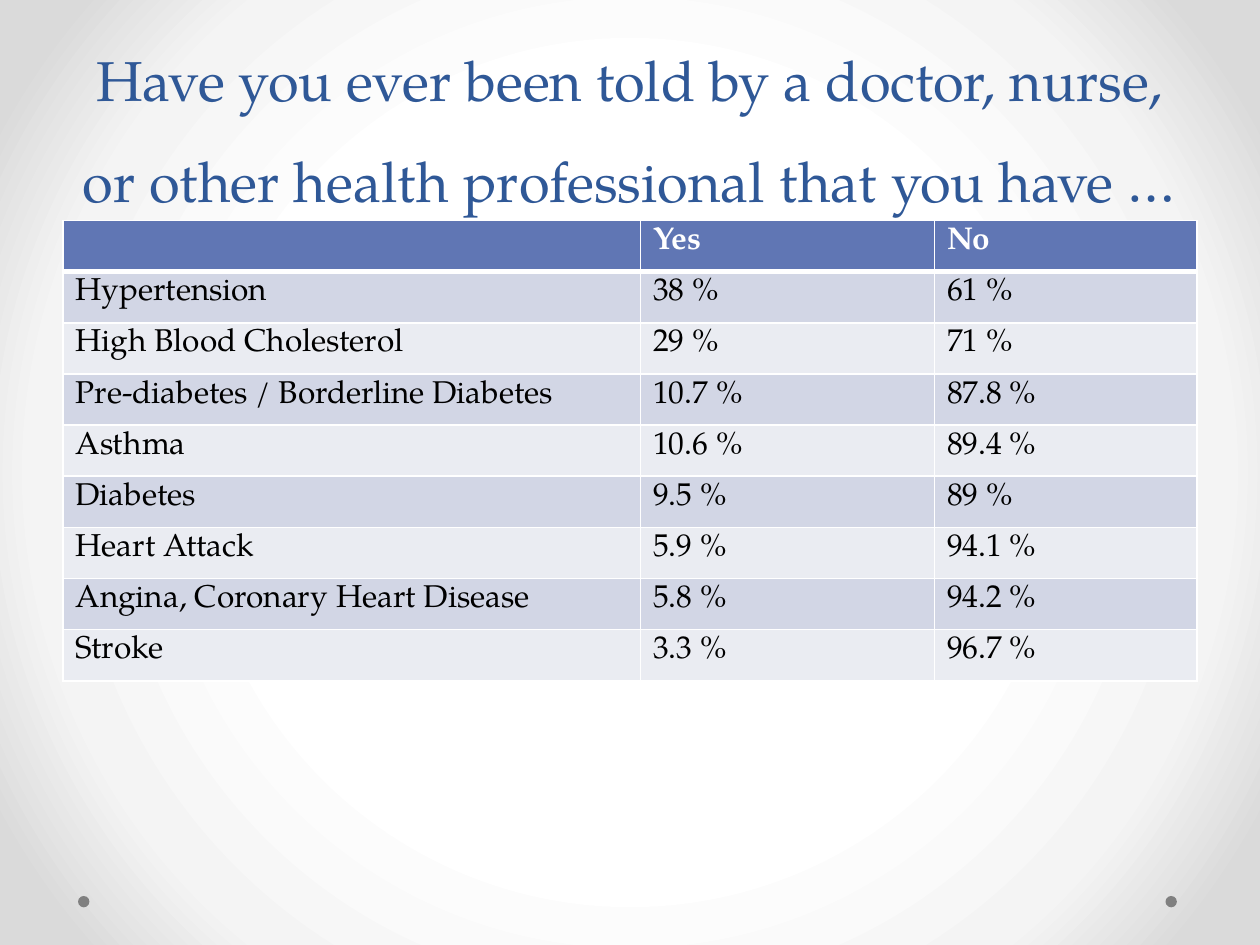
from dataclasses import dataclass

from pptx import Presentation
from pptx.dml.color import RGBColor
from pptx.enum.shapes import MSO_SHAPE
from pptx.enum.text import MSO_ANCHOR, MSO_AUTO_SIZE, PP_ALIGN
from pptx.oxml import parse_xml
from pptx.oxml.ns import nsdecls, qn
from pptx.slide import Slide
from pptx.table import _Cell
from pptx.text.text import _Paragraph
from pptx.util import Pt

FONT = "TeX Gyre Pagella"
WHITE = "FFFFFF"
TITLE = "Have you ever been told by a doctor, nurse, or other health professional that you have …"
COLUMN_WIDTHS = (330, 168, 150)
ROW_HEIGHT = 29.25
GRADIENT_STOPS = ((50, WHITE), (76, "F4F4F4"), (92, "DADADA"))


@dataclass(frozen=True)
class Answer:
    condition: str
    yes: str
    no: str


@dataclass(frozen=True)
class RowStyle:
    fill: str
    font: str
    bold: bool
    bottom_border: float


HEADER = Answer("", "Yes", "No")
ANSWERS = (
    Answer("Hypertension", "38 %", "61 %"),
    Answer("High Blood Cholesterol", "29 %", "71 %"),
    Answer("Pre-diabetes / Borderline Diabetes", "10.7 %", "87.8 %"),
    Answer("Asthma", "10.6 %", "89.4 %"),
    Answer("Diabetes", "9.5 %", "89 %"),
    Answer("Heart Attack", "5.9 %", "94.1 %"),
    Answer("Angina, Coronary Heart Disease", "5.8 %", "94.2 %"),
    Answer("Stroke", "3.3 %", "96.7 %"),
)
HEADER_STYLE = RowStyle("6076B4", WHITE, True, 3)
BAND_STYLES = (
    RowStyle("D2D6E5", "000000", False, 1),
    RowStyle("EAECF2", "000000", False, 1),
)


def color(value: str) -> RGBColor:
    return RGBColor.from_string(value)


def format_runs(paragraph: _Paragraph, size: float, font_color: str, bold: bool = False) -> None:
    for run in paragraph.runs:
        run.font.name = FONT
        run.font.size = Pt(size)
        run.font.bold = bold
        run.font.color.rgb = color(font_color)


def set_background(slide: Slide) -> None:
    stops = "".join(
        f'<a:gs pos="{position * 1000}"><a:srgbClr val="{value}"/></a:gs>'
        for position, value in GRADIENT_STOPS
    )
    background = parse_xml(
        f'<p:bg {nsdecls("p", "a")}><p:bgPr><a:gradFill rotWithShape="1">'
        f'<a:gsLst>{stops}</a:gsLst><a:path path="circle">'
        '<a:fillToRect l="50000" t="50000" r="50000" b="50000"/></a:path>'
        '</a:gradFill><a:effectLst/></p:bgPr></p:bg>'
    )
    slide.element.find(qn("p:cSld")).insert(0, background)


def add_dot(slide: Slide, left: float) -> None:
    dot = slide.shapes.add_shape(MSO_SHAPE.OVAL, Pt(left), Pt(512), Pt(6.5), Pt(6.5))
    dot.shadow.inherit = False
    dot.fill.solid()
    dot.fill.fore_color.rgb = color("808080")
    dot.line.fill.background()


def set_title(slide: Slide) -> None:
    title = slide.shapes.title
    title.left, title.top, title.width, title.height = Pt(36), Pt(0), Pt(648), Pt(126)
    text_frame = title.text_frame
    text_frame.text = TITLE
    text_frame.word_wrap = True
    text_frame.auto_size = MSO_AUTO_SIZE.NONE
    text_frame.vertical_anchor = MSO_ANCHOR.BOTTOM
    paragraph = text_frame.paragraphs[0]
    paragraph.alignment = PP_ALIGN.CENTER
    paragraph.line_spacing = Pt(58)
    format_runs(paragraph, 32, "2F5897")


def set_borders(cell: _Cell, bottom: float, top: float) -> None:
    properties = cell._tc.get_or_add_tcPr()
    widths = {"lnL": 1, "lnR": 1, "lnT": top, "lnB": bottom}
    for index, (side, width) in enumerate(widths.items()):
        border = parse_xml(
            f'<a:{side} {nsdecls("a")} w="{Pt(width)}"><a:solidFill>'
            f'<a:srgbClr val="{WHITE}"/></a:solidFill></a:{side}>'
        )
        properties.insert(index, border)


def fill_cell(cell: _Cell, text: str, style: RowStyle, top_border: float) -> None:
    cell.text_frame.text = text
    format_runs(cell.text_frame.paragraphs[0], 18, style.font, style.bold)
    cell.fill.solid()
    cell.fill.fore_color.rgb = color(style.fill)
    set_borders(cell, style.bottom_border, top_border)


def add_answer_table(slide: Slide) -> None:
    answers = (HEADER, *ANSWERS)
    frame = slide.shapes.add_table(
        len(answers), len(COLUMN_WIDTHS), Pt(36), Pt(126),
        Pt(sum(COLUMN_WIDTHS)), Pt(ROW_HEIGHT * len(answers)),
    )
    table = frame.table
    for column, width in zip(table.columns, COLUMN_WIDTHS):
        column.width = Pt(width)
    top_border = 1
    for index, (row, answer) in enumerate(zip(table.rows, answers)):
        row.height = Pt(ROW_HEIGHT)
        style = BAND_STYLES[(index - 1) % 2] if index else HEADER_STYLE
        for cell, text in zip(row.cells, (answer.condition, answer.yes, answer.no)):
            fill_cell(cell, text, style, top_border)
        top_border = style.bottom_border


def main() -> None:
    presentation = Presentation()
    presentation.slide_width = Pt(720)
    presentation.slide_height = Pt(540)
    slide = presentation.slides.add_slide(presentation.slide_layouts[5])
    set_background(slide)
    for left in (666, 44.6):
        add_dot(slide, left)
    set_title(slide)
    add_answer_table(slide)
    presentation.save("out.pptx")


if __name__ == "__main__":
    main()
